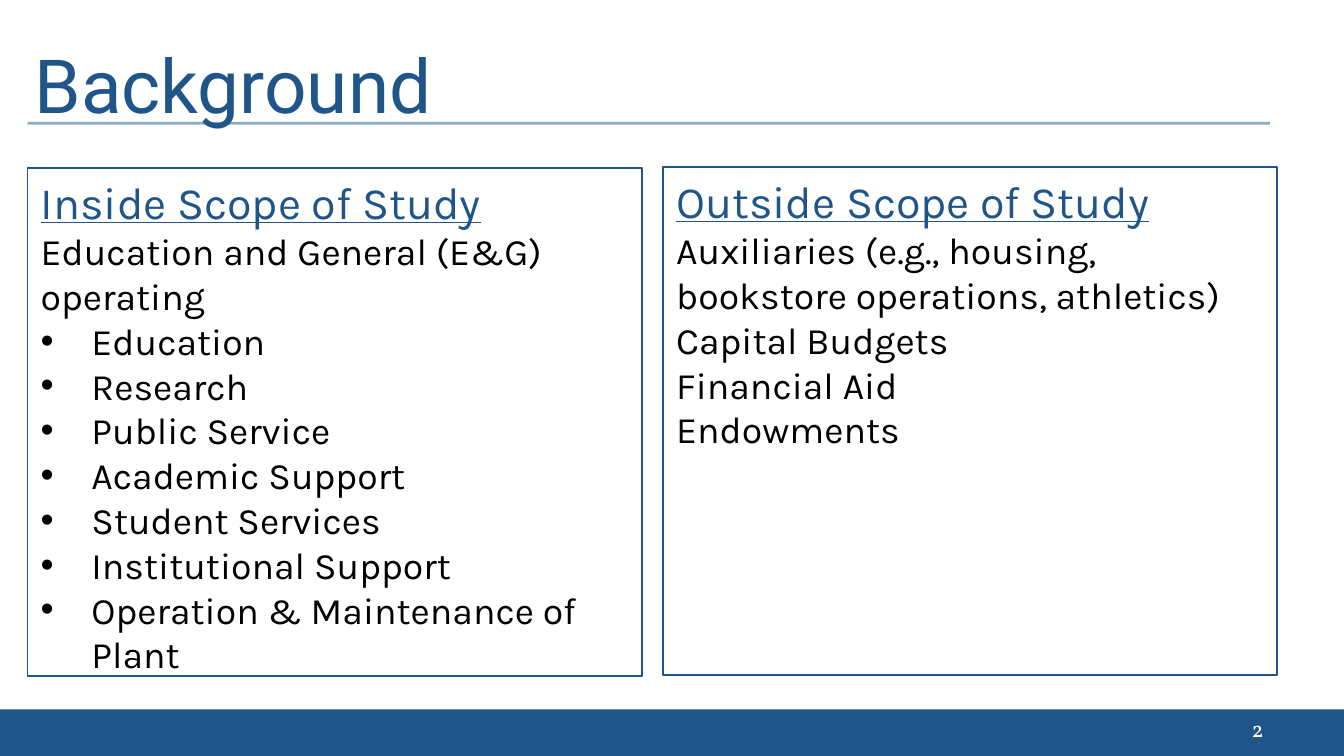
from dataclasses import dataclass

from lxml import etree
from pptx import Presentation
from pptx.dml.color import RGBColor
from pptx.enum.shapes import MSO_CONNECTOR, MSO_SHAPE
from pptx.enum.text import MSO_ANCHOR, PP_ALIGN
from pptx.oxml.ns import qn
from pptx.util import Cm, Pt


@dataclass(frozen=True)
class Theme:
    blue: RGBColor = RGBColor(0x20, 0x55, 0x8A)
    black: RGBColor = RGBColor(0, 0, 0)
    white: RGBColor = RGBColor(255, 255, 255)
    title_font: str = "Roboto"
    body_font: str = "Karla"
    number_font: str = "Vollkorn"
    title_size: int = 40
    heading_size: int = 24
    body_size: int = 20
    number_size: int = 12


THEME = Theme()

PANEL_WIDTH, PANEL_HEIGHT = 11.61, 9.6
INSIDE_LEFT, INSIDE_TOP = 0.52, 3.18
OUTSIDE_LEFT, OUTSIDE_TOP = 12.53, 3.16

INSIDE_INTRO = ["Education and General (E&G) operating"]
INSIDE_AREAS = [
    "Education",
    "Research",
    "Public Service",
    "Academic Support",
    "Student Services",
    "Institutional Support",
    "Operation & Maintenance of Plant",
]
OUTSIDE_AREAS = [
    "Auxiliaries (e.g., housing, bookstore operations, athletics)",
    "Capital Budgets",
    "Financial Aid",
    "Endowments",
]


def add_bullet(paragraph):
    properties = paragraph._p.get_or_add_pPr()
    properties.set("marL", str(Cm(0.96)))
    properties.set("indent", str(Cm(-0.96)))
    etree.SubElement(properties, qn("a:buFont")).set("typeface", "Arial")
    etree.SubElement(properties, qn("a:buChar")).set("char", "•")


def write(frame, text, *, font, size, color, underline=False,
          align=PP_ALIGN.LEFT, bullet=False):
    first = frame.paragraphs[0]
    paragraph = frame.add_paragraph() if first.runs else first
    paragraph.alignment = align
    if bullet:
        add_bullet(paragraph)
    run = paragraph.add_run()
    run.text = text
    run.font.name = font
    run.font.size = Pt(size)
    run.font.color.rgb = color
    run.font.underline = underline


def set_frame(frame, anchor):
    frame.word_wrap = True
    frame.vertical_anchor = anchor
    frame.margin_left = frame.margin_right = Cm(0.25)
    frame.margin_top = frame.margin_bottom = Cm(0.12)
    return frame


def add_label(slide, left, top, width, height, text, anchor, **style):
    label = slide.shapes.add_textbox(Cm(left), Cm(top), Cm(width), Cm(height))
    write(set_frame(label.text_frame, anchor), text, **style)


def add_footer_band(slide):
    band = slide.shapes.add_shape(
        MSO_SHAPE.RECTANGLE, Cm(-0.02), Cm(13.41), Cm(25.43), Cm(0.89))
    band.shadow.inherit = False
    band.fill.solid()
    band.fill.fore_color.rgb = THEME.blue
    band.line.fill.background()


def add_title_rule(slide):
    rule = slide.shapes.add_connector(
        MSO_CONNECTOR.STRAIGHT, Cm(0.52), Cm(2.33), Cm(24), Cm(2.33))
    rule.line.color.rgb = THEME.blue
    rule.line.width = Pt(1.5)
    color = rule.line._ln.find(".//" + qn("a:srgbClr"))
    etree.SubElement(color, qn("a:alpha")).set("val", "50000")
    etree.SubElement(rule._element.spPr, qn("a:effectLst"))


def add_scope_panel(slide, left, top, heading, lines, bullets=()):
    panel = slide.shapes.add_shape(
        MSO_SHAPE.RECTANGLE, Cm(left), Cm(top),
        Cm(PANEL_WIDTH), Cm(PANEL_HEIGHT))
    panel.shadow.inherit = False
    panel.fill.background()
    panel.line.color.rgb = THEME.blue
    panel.line.width = Pt(1)
    frame = set_frame(panel.text_frame, MSO_ANCHOR.TOP)
    write(frame, heading, font=THEME.body_font, size=THEME.heading_size,
          color=THEME.blue, underline=True)
    for text in [*lines, *bullets]:
        write(frame, text, font=THEME.body_font, size=THEME.body_size,
              color=THEME.black, bullet=text in bullets)


def main():
    deck = Presentation()
    deck.slide_width, deck.slide_height = Cm(25.4), Cm(14.29)
    slide = deck.slides.add_slide(deck.slide_layouts[6])
    add_footer_band(slide)
    add_title_rule(slide)
    add_scope_panel(slide, OUTSIDE_LEFT, OUTSIDE_TOP,
                    "Outside Scope of Study", OUTSIDE_AREAS)
    add_label(slide, 18.21, 13.39, 5.92, 0.76, "2", MSO_ANCHOR.MIDDLE,
              font=THEME.number_font, size=THEME.number_size,
              color=THEME.white, align=PP_ALIGN.RIGHT)
    add_scope_panel(slide, INSIDE_LEFT, INSIDE_TOP,
                    "Inside Scope of Study", INSIDE_INTRO, INSIDE_AREAS)
    add_label(slide, 0.41, 0.61, 23.04, 1.7, "Background", MSO_ANCHOR.TOP,
              font=THEME.title_font, size=THEME.title_size, color=THEME.blue)
    deck.save("out.pptx")


if __name__ == "__main__":
    main()
